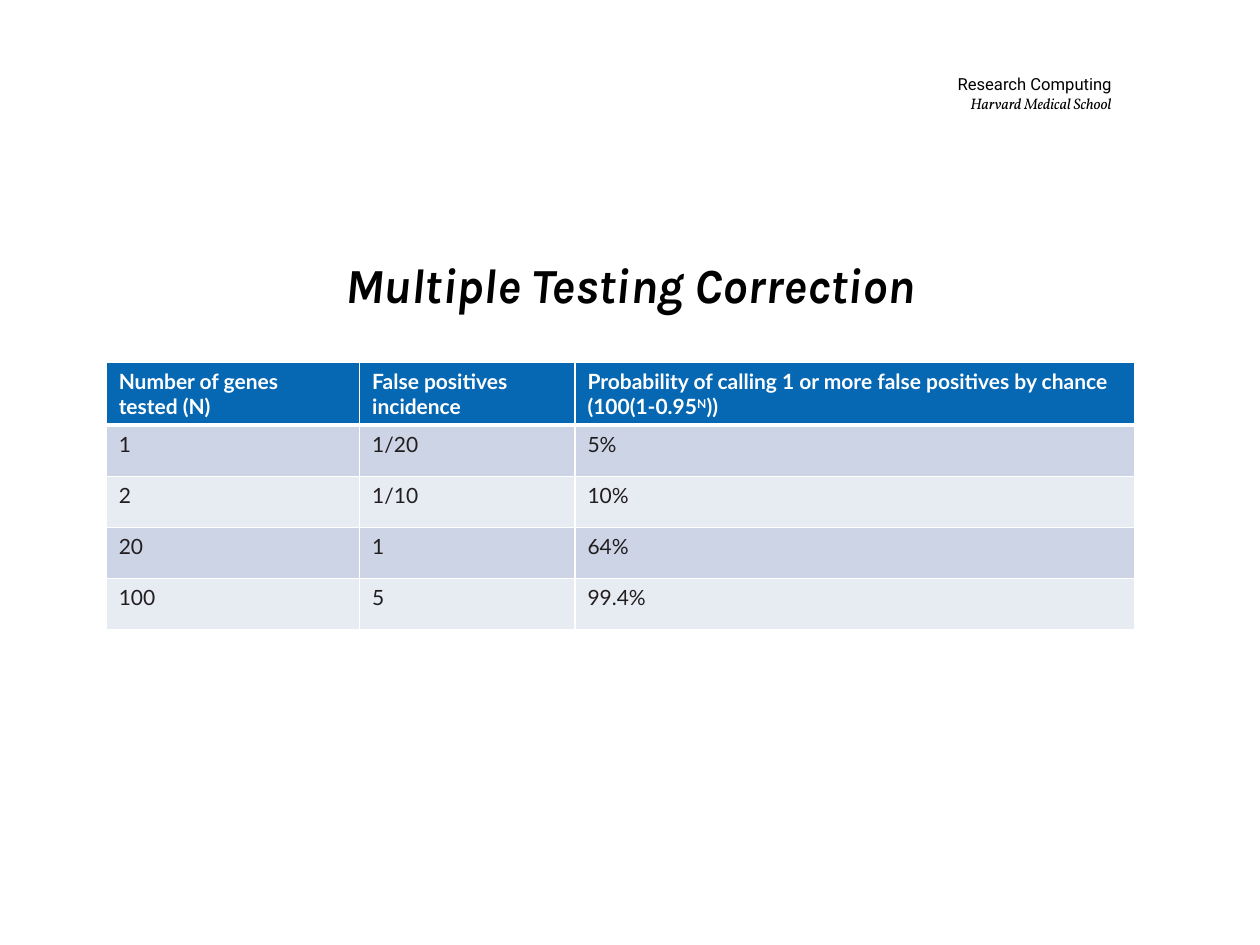
from lxml import etree
from pptx import Presentation
from pptx.dml.color import RGBColor
from pptx.enum.text import MSO_ANCHOR, MSO_AUTO_SIZE, PP_ALIGN
from pptx.oxml.ns import qn
from pptx.util import Cm, Pt

MIDDLE = MSO_ANCHOR.MIDDLE
NO_AUTOFIT = MSO_AUTO_SIZE.NONE
CENTER, RIGHT = PP_ALIGN.CENTER, PP_ALIGN.RIGHT

BLACK = RGBColor(0x00, 0x00, 0x00)
WHITE = RGBColor(0xFF, 0xFF, 0xFF)
INK = RGBColor(0x22, 0x1E, 0x1F)
HEADER_BLUE = RGBColor(0x06, 0x68, 0xB3)
BAND_DARK = RGBColor(0xCC, 0xD4, 0xE5)
BAND_LIGHT = RGBColor(0xE7, 0xEB, 0xF2)

SUPERSCRIPT = "30000"
COLUMN_WIDTHS = (5.11, 4.34, 11.28)
HEADER_HEIGHT, ROW_HEIGHT = 1.24, 1.03
HEADERS = (
    (("Number of genes",), ("tested (N)",)),
    (("False positives",), ("incidence",)),
    (("Probability of calling 1 or more false positives by chance (100(1-0.95", "N", "))"),),
)
RESULTS = (
    ("1", "1/20", "5%"),
    ("2", "1/10", "10%"),
    ("20", "1", "64%"),
    ("100", "5", "99.4%"),
)


def add_span(para, text, font_name, size, color, bold=False, italic=False):
    span = para.add_run()
    span.text = text
    font = span.font
    font.name, font.size = font_name, Pt(size)
    font.bold, font.italic = bold, italic
    font.color.rgb = color
    return span


def add_title(page):
    title = page.shapes.title
    title.left, title.top, title.width, title.height = Cm(0), Cm(5), Cm(25.4), Cm(1.45)
    frame = title.text_frame
    frame.auto_size = NO_AUTOFIT
    frame.vertical_anchor = MIDDLE
    para = frame.paragraphs[0]
    para.alignment = CENTER
    add_span(para, "Multiple Testing Correction", "Karla", 28, BLACK, bold=True, italic=True)


def add_affiliation(page):
    box = page.shapes.add_textbox(Cm(16.18), Cm(1.04), Cm(6.43), Cm(1.68))
    frame = box.text_frame
    frame.word_wrap = True
    frame.vertical_anchor = MIDDLE
    frame.margin_left = frame.margin_right = Cm(0.2)
    frame.margin_top = frame.margin_bottom = Cm(0.1)
    group = frame.paragraphs[0]
    add_span(group, "Research Computing", "Roboto", 9.5, BLACK)
    school = frame.add_paragraph()
    add_span(school, "Harvard Medical School", "Vollkorn", 8.7, BLACK, italic=True)
    for para in frame.paragraphs:
        para.alignment = RIGHT


def set_borders(cell, top, bottom):
    properties = cell._tc.get_or_add_tcPr()
    for side, width in (("L", 1), ("R", 1), ("T", top), ("B", bottom)):
        line = etree.SubElement(properties, qn(f"a:ln{side}"), w=str(Pt(width)))
        fill = etree.SubElement(line, qn("a:solidFill"))
        etree.SubElement(fill, qn("a:srgbClr"), val=str(WHITE))


def fill_cell(cell, color, top=1, bottom=1):
    set_borders(cell, top, bottom)
    cell.fill.solid()
    cell.fill.fore_color.rgb = color


def write_header(cell, lines):
    frame = cell.text_frame
    for index, parts in enumerate(lines):
        para = frame.add_paragraph() if index else frame.paragraphs[0]
        for part in parts:
            span = add_span(para, part, "Lato", 12, WHITE, bold=True)
            if part == "N":
                span.font._element.set("baseline", SUPERSCRIPT)


def add_results_table(page):
    row_count = len(RESULTS) + 1
    height = HEADER_HEIGHT + ROW_HEIGHT * len(RESULTS)
    frame = page.shapes.add_table(
        row_count, len(COLUMN_WIDTHS), Cm(2.14), Cm(7.3), Cm(sum(COLUMN_WIDTHS)), Cm(height)
    )
    table = frame.table
    for column, width in zip(table.columns, COLUMN_WIDTHS):
        column.width = Cm(width)
    for index, row in enumerate(table.rows):
        row.height = Cm(ROW_HEIGHT if index else HEADER_HEIGHT)
    for column, lines in enumerate(HEADERS):
        cell = table.cell(0, column)
        fill_cell(cell, HEADER_BLUE, bottom=3)
        write_header(cell, lines)
    for row, values in enumerate(RESULTS, start=1):
        for column, value in enumerate(values):
            cell = table.cell(row, column)
            fill_cell(cell, BAND_DARK if row % 2 else BAND_LIGHT, top=3 if row == 1 else 1)
            add_span(cell.text_frame.paragraphs[0], value, "Lato", 12, INK)


def main():
    deck = Presentation()
    deck.slide_width, deck.slide_height = Cm(25.4), Cm(19.05)
    page = deck.slides.add_slide(deck.slide_layouts[5])
    add_affiliation(page)
    add_title(page)
    add_results_table(page)
    deck.save("out.pptx")


if __name__ == "__main__":
    main()
